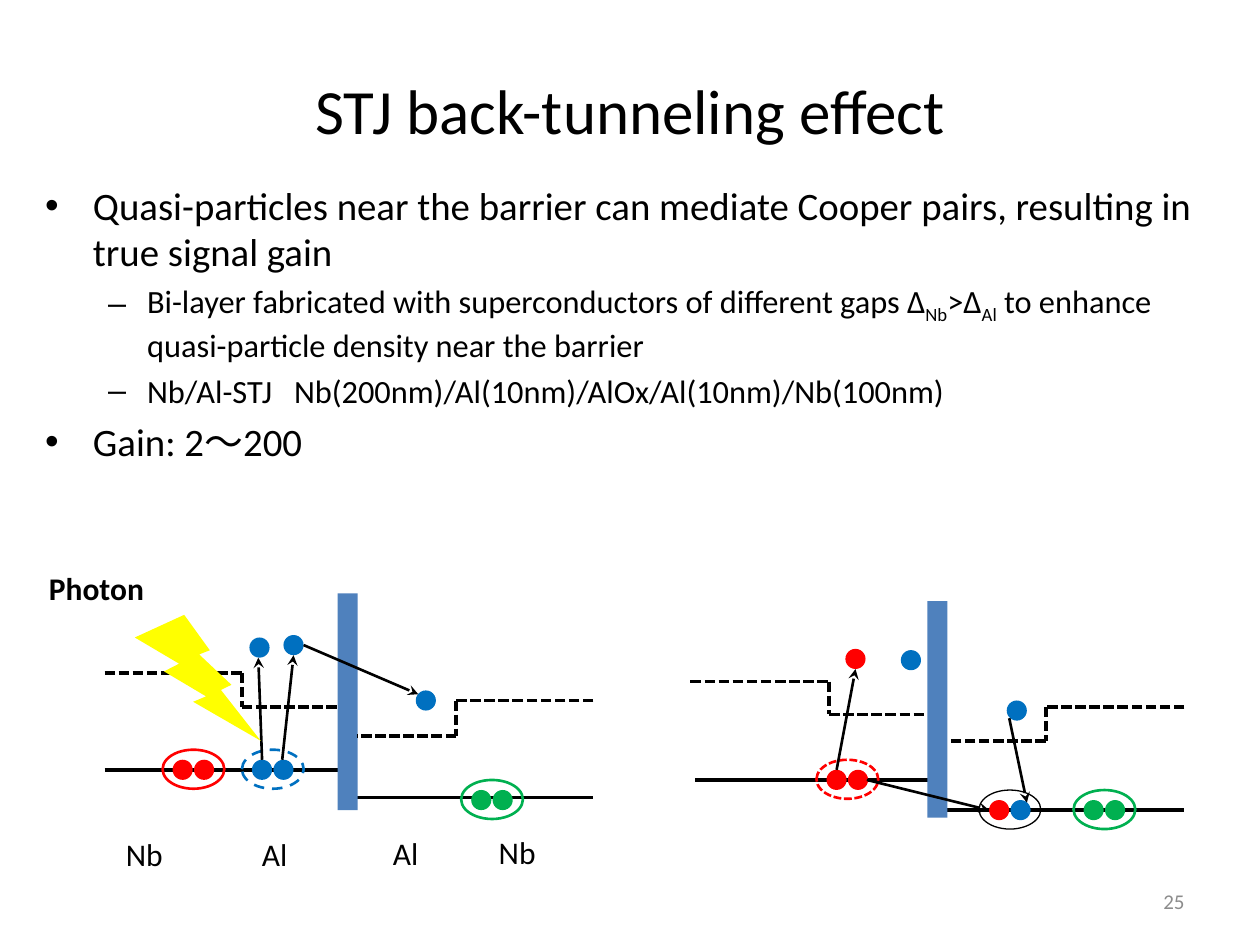
from dataclasses import dataclass
from itertools import pairwise

from lxml.etree import SubElement
from pptx import Presentation
from pptx.dml.color import RGBColor as RGB
from pptx.enum.dml import MSO_LINE as Dash
from pptx.enum.shapes import MSO_CONNECTOR as Link, MSO_SHAPE as Form
from pptx.enum.text import MSO_ANCHOR as Anchor, PP_ALIGN as Align
from pptx.oxml.ns import qn
from pptx.util import Emu, Pt

SCALE = 9144
BLACK, BLUE, RED, GREEN = "000000", "0070C0", "FF0000", "00B050"
STEEL, YELLOW, GRAY = "4F81BD", "FFFF00", "8C8C8C"
DOT = 16
PITCH = 17


@dataclass
class Pair:
    x: int
    y: int
    fills: tuple
    ring: str
    dash: Dash | None = None
    width: float = 1.5


@dataclass
class Spot:
    x: int
    y: int
    color: str


@dataclass
class Label:
    text: str
    box: tuple
    size: float = 18
    color: str = BLACK
    bold: bool = False
    align: Align = Align.LEFT
    anchor: Anchor = Anchor.TOP
    wrap: bool = False


@dataclass
class Item:
    runs: tuple
    level: int = 0


@dataclass
class Style:
    left: int
    hang: int
    size: float
    mark: str


BASES = [(552, 619, 737, 619), (83, 611, 268, 611),
         (283, 633, 471, 633), (752, 643, 940, 643)]
WALLS = [(268, 471, 16, 172), (736, 477, 16, 172)]
PAIRS = [
    Pair(137, 603, (RED, RED), RED),
    Pair(200, 603, (BLUE, BLUE), BLUE, Dash.DASH),
    Pair(374, 627, (GREEN, GREEN), GREEN),
    Pair(656, 611, (RED, RED), RED, Dash.SQUARE_DOT),
    Pair(785, 635, (RED, BLUE), BLACK, width=0.75),
    Pair(860, 635, (GREEN, GREEN), GREEN),
]
SPOTS = [Spot(198, 506, BLUE), Spot(225, 504, BLUE), Spot(330, 548, BLUE),
         Spot(671, 515, RED), Spot(715, 516, BLUE), Spot(799, 556, BLUE)]
ARROWS = [(224, 603, 233, 520), (208, 603, 205, 522), (241, 512, 332, 551),
          (801, 570, 815, 637), (664, 611, 679, 531), (688, 619, 785, 643)]
STEPS = [
    [(83, 534), (192, 534), (192, 561), (270, 561)],
    [(471, 556), (362, 556), (362, 584), (283, 584)],
    [(548, 541), (658, 541), (658, 567), (736, 567)],
    [(940, 561), (830, 561), (830, 588), (752, 588)],
]
LABELS = [
    Label("STJ back-tunneling effect", (50, 50, 900, 73), 36,
          align=Align.CENTER, anchor=Anchor.MIDDLE, wrap=True),
    Label("Photon", (29, 447, 96, 40), bold=True),
    Label("Nb", (90, 658, 71, 57)),
    Label("Al", (198, 658, 55, 57)),
    Label("Al", (302, 657, 55, 57)),
    Label("Nb", (386, 656, 71, 57)),
    Label("25", (717, 695, 233, 40), 12, GRAY,
          align=Align.RIGHT, anchor=Anchor.MIDDLE, wrap=True),
]
STYLES = [Style(38, 38, 22.2, "•"), Style(81, 31, 18.5, "–")]
ITEMS = [
    Item(("Quasi-particles near the barrier can mediate Cooper pairs, "
          "resulting in true signal gain",)),
    Item(("Bi-layer fabricated with superconductors of different gaps Δ", "Nb",
          ">Δ", "Al", " to enhance quasi-particle density near the barrier"), 1),
    Item(("Nb/Al-STJ   Nb(200nm)/Al(10nm)/AlOx/Al(10nm)/Nb(100nm)",), 1),
    Item(("Gain: 2～200",)),
]


def px(*vals: int) -> list:
    return [Emu(val * SCALE) for val in vals]


def tint(code: str) -> RGB:
    return RGB.from_string(code)


def apply(obj, form: dict) -> None:
    for name, val in form.items():
        setattr(obj, name, val)


def ink(font, size: float, color: str, bold: bool = False) -> None:
    apply(font, {"name": "Calibri", "size": Pt(size), "bold": bold})
    font.color.rgb = tint(color)


def draw_shape(shapes, kind: Form, box: tuple, fill: str | None = None):
    shape = shapes.add_shape(kind, *px(*box))
    shape.shadow.inherit = False
    if fill:
        shape.fill.solid()
        shape.fill.fore_color.rgb = tint(fill)
    else:
        shape.fill.background()
    shape.line.fill.background()
    return shape


def draw_line(shapes, ends: tuple, width: float = 2,
              dash: Dash | None = None, arrow: bool = False) -> None:
    line = shapes.add_connector(Link.STRAIGHT, *px(*ends))
    line.line.color.rgb = tint(BLACK)
    apply(line.line, {"width": Pt(width), "dash_style": dash})
    if arrow:
        SubElement(line.line._get_or_add_ln(), qn("a:tailEnd"), type="stealth")
    SubElement(line._element.spPr, qn("a:effectLst"))


def draw_pair(shapes, pair: Pair) -> None:
    group = shapes.add_group_shape().shapes
    for col, fill in enumerate(pair.fills):
        draw_shape(group, Form.OVAL,
                   (pair.x + col * PITCH, pair.y, DOT, DOT), fill)
    ring = draw_shape(group, Form.OVAL, (pair.x - 8, pair.y - 8, 49, 31))
    ring.line.color.rgb = tint(pair.ring)
    apply(ring.line, {"width": Pt(pair.width), "dash_style": pair.dash})


def draw_step(shapes, step: list) -> None:
    group = shapes.add_group_shape().shapes
    for start, stop in pairwise(step):
        draw_line(group, start + stop, dash=Dash.SQUARE_DOT)


def draw_label(shapes, label: Label) -> None:
    frame = shapes.add_textbox(*px(*label.box)).text_frame
    apply(frame, {"word_wrap": label.wrap, "vertical_anchor": label.anchor})
    para = frame.paragraphs[0]
    apply(para, {"text": label.text, "alignment": label.align})
    ink(para.runs[0].font, label.size, label.color, label.bold)


def draw_list(shapes, box: tuple, items: list) -> None:
    frame = shapes.add_textbox(*px(*box)).text_frame
    frame.word_wrap = True
    for row, item in enumerate(items):
        para = frame.add_paragraph() if row else frame.paragraphs[0]
        para.level = item.level
        style = STYLES[item.level]
        props = para._p.get_or_add_pPr()
        for key, val in (("marL", style.left), ("indent", -style.hang)):
            props.set(key, str(val * SCALE))
        space = SubElement(props, qn("a:spcBef"))
        SubElement(space, qn("a:spcPct"), val="20000")
        SubElement(props, qn("a:buFont"), typeface="Arial")
        SubElement(props, qn("a:buChar"), char=style.mark)
        for spot, text in enumerate(item.runs):
            run = para.add_run()
            run.text = text
            ink(run.font, style.size, BLACK)
            if spot % 2:
                run._r.get_or_add_rPr().set("baseline", "-25000")


def main() -> None:
    deck = Presentation()
    apply(deck, dict(zip(("slide_width", "slide_height"), px(1000, 750))))
    shapes = deck.slides.add_slide(deck.slide_layouts[6]).shapes
    for base in BASES:
        draw_line(shapes, base)
    for wall in WALLS:
        draw_shape(shapes, Form.RECTANGLE, wall, STEEL)
    for pair in PAIRS:
        draw_pair(shapes, pair)
    for spot in SPOTS:
        draw_shape(shapes, Form.OVAL, (spot.x, spot.y, DOT, DOT), spot.color)
    for arrow in ARROWS:
        draw_line(shapes, arrow, 1.5, arrow=True)
    for step in STEPS:
        draw_step(shapes, step)
    draw_shape(shapes, Form.LIGHTNING_BOLT, (107, 488, 100, 100), YELLOW)
    for label in LABELS:
        draw_label(shapes, label)
    draw_list(shapes, (26, 139, 946, 205), ITEMS)
    deck.save("out.pptx")


if __name__ == "__main__":
    main()
